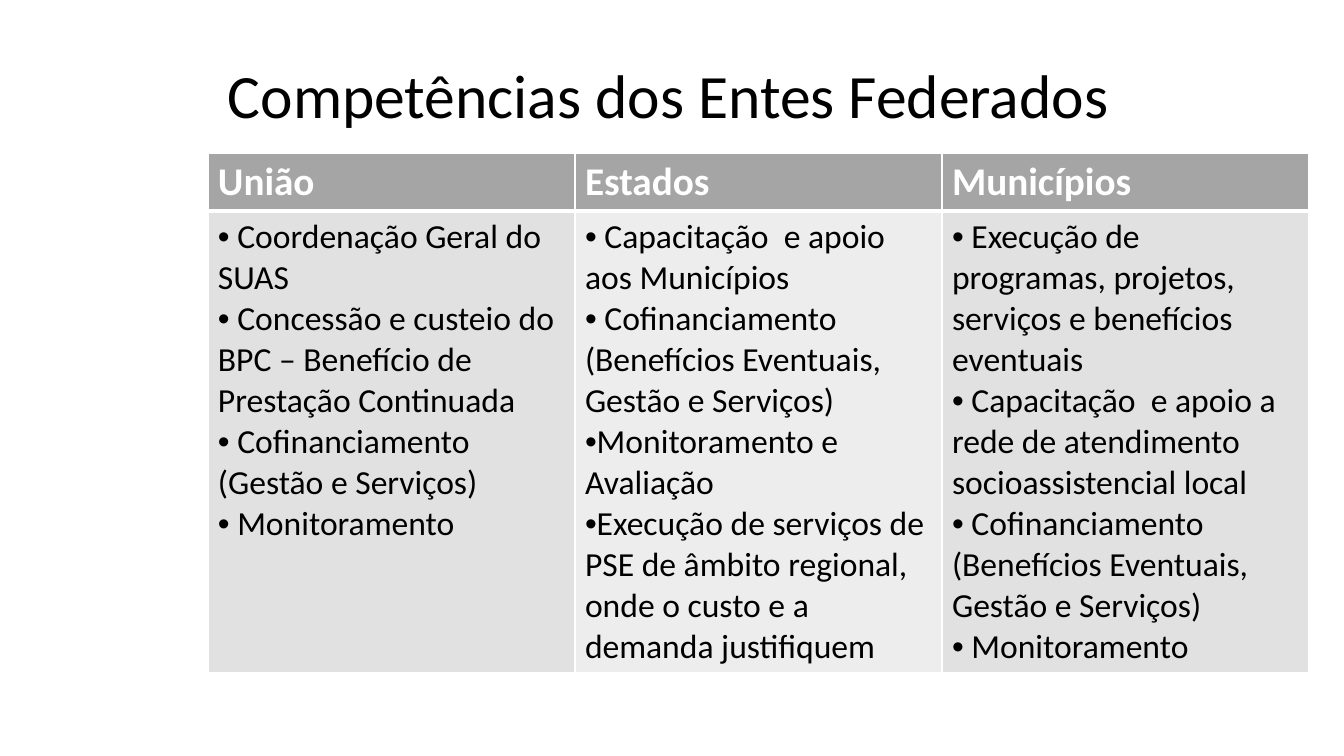
from dataclasses import dataclass

from lxml.etree import SubElement
from pptx import Presentation
from pptx.dml.color import RGBColor
from pptx.enum.text import MSO_ANCHOR as Anchor, MSO_AUTO_SIZE as AutoSize, PP_ALIGN as Align
from pptx.oxml.ns import qn
from pptx.table import _Cell as Cell
from pptx.text.text import _Paragraph as Paragraph
from pptx.util import Pt

FONT = "Calibri"
COLORS = {"text": "000000", "white": "FFFFFF", "header": "A5A5A5", "band": "E1E1E1", "light": "EDEDED"}
COLUMN_WIDTH = 262.2
ROW_HEIGHTS = (36, 316)


@dataclass
class Level:
    name: str
    duties: list[str]
    fill: str


LEVELS = [
    Level("União", [
        " Coordenação Geral do SUAS",
        " Concessão e custeio do BPC – Benefício de Prestação Continuada",
        " Cofinanciamento (Gestão e Serviços)",
        " Monitoramento",
    ], "band"),
    Level("Estados", [
        " Capacitação  e apoio aos Municípios",
        " Cofinanciamento (Benefícios Eventuais, Gestão e Serviços)",
        "Monitoramento e Avaliação",
        "Execução de serviços de PSE de âmbito regional, onde o custo e a demanda justifiquem",
    ], "light"),
    Level("Municípios", [
        " Execução de programas, projetos, serviços e benefícios eventuais",
        " Capacitação  e apoio a rede de atendimento socioassistencial local",
        " Cofinanciamento (Benefícios Eventuais, Gestão e Serviços)",
        " Monitoramento",
    ], "band"),
]


def format_runs(paragraph: Paragraph, size: float, color: str, bold: bool = False) -> None:
    """Set the font of every run in a paragraph."""
    for run in paragraph.runs:
        run.font.name = FONT
        run.font.size = Pt(size)
        run.font.bold = bold
        run.font.color.rgb = RGBColor.from_string(COLORS[color])


def add_bullet(paragraph: Paragraph) -> None:
    """Put a round bullet directly before the text."""
    properties = paragraph._p.get_or_add_pPr()
    properties.set("marL", "0")
    properties.set("indent", "0")
    SubElement(properties, qn("a:buFont"), typeface="Arial")
    SubElement(properties, qn("a:buChar"), char="•")


def style_cell(cell: Cell, fill: str, top: float, bottom: float) -> None:
    """Give a cell white borders and a solid fill."""
    properties = cell._tc.get_or_add_tcPr()
    for side, width in (("L", 1), ("R", 1), ("T", top), ("B", bottom)):
        line = SubElement(properties, qn(f"a:ln{side}"), w=str(Pt(width)))
        solid = SubElement(line, qn("a:solidFill"))
        SubElement(solid, qn("a:srgbClr"), val=COLORS["white"])
    cell.fill.solid()
    cell.fill.fore_color.rgb = RGBColor.from_string(COLORS[fill])


def fill_column(header: Cell, body: Cell, level: Level) -> None:
    """Write one level of government into its column."""
    style_cell(header, "header", 1, 3)
    header.text_frame.text = level.name
    format_runs(header.text_frame.paragraphs[0], 28, "white", True)
    style_cell(body, level.fill, 3, 1)
    body.text_frame.text = "\n".join(level.duties)
    for paragraph in body.text_frame.paragraphs:
        add_bullet(paragraph)
        format_runs(paragraph, 24, "text")


def main() -> None:
    """Build and save the slide."""
    presentation = Presentation()
    presentation.slide_width, presentation.slide_height = Pt(960), Pt(540)
    slide = presentation.slides.add_slide(presentation.slide_layouts[5])

    title = slide.shapes.title
    title.left, title.top, title.width, title.height = Pt(155.5), Pt(27.4), Pt(703.4), Pt(86.4)
    title.text_frame.text = "Competências dos Entes Federados"
    title.text_frame.auto_size = AutoSize.NONE
    title.text_frame.vertical_anchor = Anchor.MIDDLE
    paragraph = title.text_frame.paragraphs[0]
    paragraph.alignment = Align.LEFT
    paragraph.line_spacing = 0.9
    format_runs(paragraph, 44, "text")

    table = slide.shapes.add_table(
        len(ROW_HEIGHTS), len(LEVELS), Pt(148.5), Pt(109.4),
        Pt(COLUMN_WIDTH * len(LEVELS)), Pt(sum(ROW_HEIGHTS)),
    ).table
    for row, height in zip(table.rows, ROW_HEIGHTS):
        row.height = Pt(height)
    for index, level in enumerate(LEVELS):
        table.columns[index].width = Pt(COLUMN_WIDTH)
        fill_column(table.cell(0, index), table.cell(1, index), level)

    presentation.save("out.pptx")


if __name__ == "__main__":
    main()
